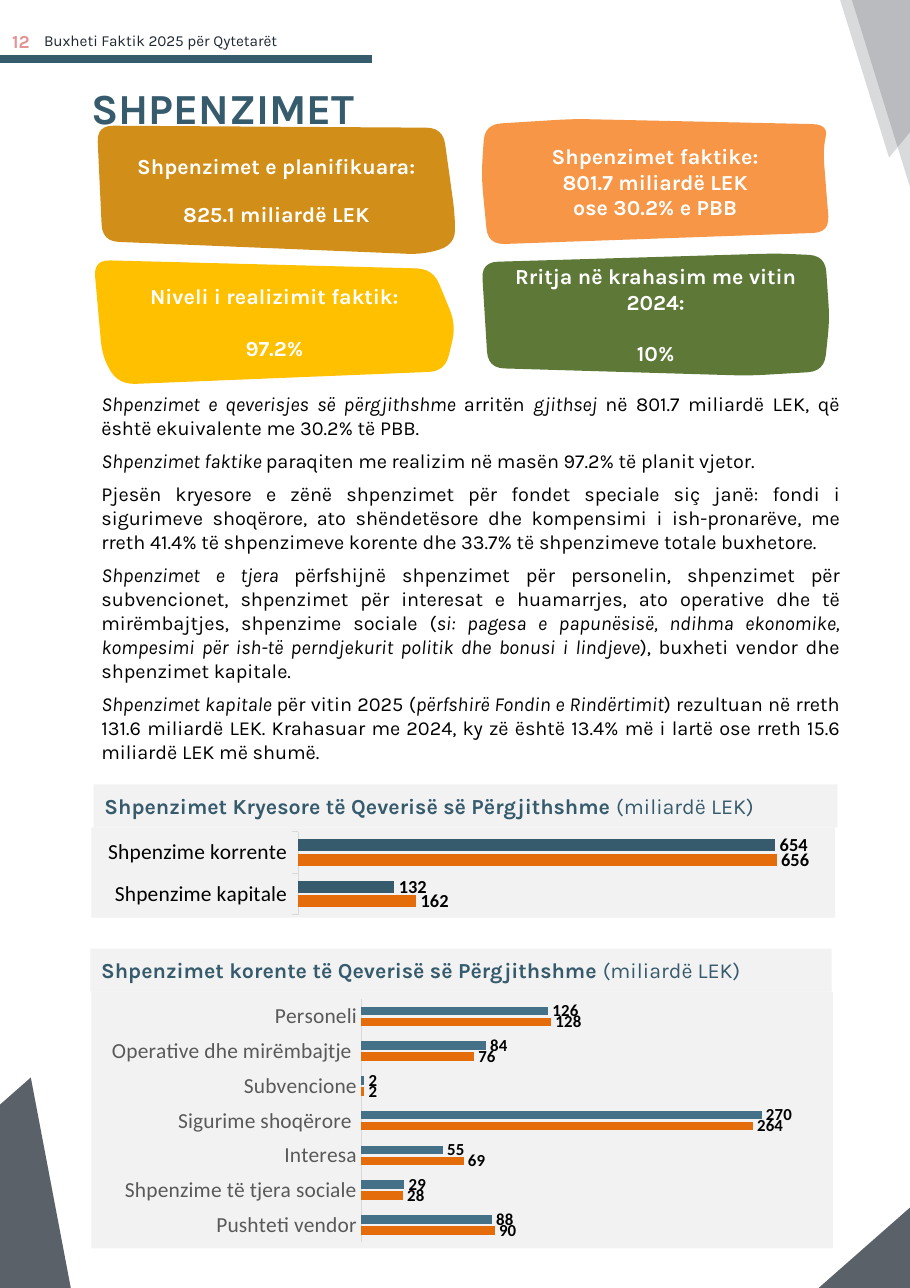
"""Build the expenditure page of the citizens' budget report."""
from math import dist
from lxml.etree import SubElement
from pptx import Presentation
from pptx.chart.data import CategoryChartData
from pptx.dml.color import RGBColor
from pptx.enum.chart import XL_CHART_TYPE, XL_LABEL_POSITION, XL_TICK_MARK
from pptx.enum.shapes import MSO_SHAPE
from pptx.enum.text import MSO_ANCHOR, MSO_AUTO_SIZE, PP_ALIGN
from pptx.oxml import parse_xml
from pptx.oxml.ns import nsdecls, qn
from pptx.util import Inches, Pt

BLUE = RGBColor.from_string("365B6D")
STEEL = RGBColor.from_string("447188")
ORANGE = RGBColor.from_string("E46C0A")
INK = RGBColor.from_string("1E2732")
PINK = RGBColor.from_string("E49393")
GREY = RGBColor.from_string("595959")
RULE = RGBColor.from_string("D9D9D9")
PANEL = RGBColor.from_string("F2F2F2")
BLACK = RGBColor.from_string("000000")
WHITE = RGBColor.from_string("FFFFFF")
OCHRE = RGBColor.from_string("D18F19")
PEACH = RGBColor.from_string("F79646")
GREEN = RGBColor.from_string("5D7837")
YELLOW = RGBColor.from_string("FFC000")

deck = Presentation()
deck.slide_width, deck.slide_height = Inches(8.26), Inches(11.69)
page = deck.slides.add_slide(deck.slide_layouts[1])
shapes = page.shapes


def style(para, size, color, bold=False):
    """Format every run of a paragraph in Karla."""
    for span in para.runs:
        span.font.name, span.font.size = "Karla", Pt(size)
        span.font.color.rgb, span.font.bold = color, bold


def add_outline(points, color):
    """Draw a closed, filled outline through points in inches."""
    corners = [(Inches(x), Inches(y)) for x, y in points]
    builder = shapes.build_freeform(*corners[0], scale=1.0)
    builder.add_line_segments(corners[1:], close=True)
    outline = builder.convert_to_shape()
    outline.shadow.inherit = False
    outline.fill.solid()
    outline.fill.fore_color.rgb = color
    outline.line.fill.background()
    return outline


title = shapes.title
title.left, title.top, title.width, title.height = map(Inches, (0.83, 0.66, 4.83, 0.49))
frame = title.text_frame
frame.text = "SHPENZIMET"
frame.auto_size, frame.vertical_anchor = MSO_AUTO_SIZE.NONE, MSO_ANCHOR.TOP
frame.margin_left = frame.margin_top = frame.margin_right = frame.margin_bottom = 0
frame.paragraphs[0].alignment = PP_ALIGN.LEFT
frame.paragraphs[0].line_spacing = Pt(39.2)
style(frame.paragraphs[0], 28, BLUE, True)

STORY = [
    "*Shpenzimet e qeverisjes së përgjithshme *arritën *gjithsej *në 801.7 miliardë LEK, "
    "që është ekuivalente me 30.2% të PBB.",
    "*Shpenzimet faktike *paraqiten me realizim në masën 97.2% të planit vjetor.",
    "Pjesën kryesore e zënë shpenzimet për fondet speciale siç janë: fondi i sigurimeve "
    "shoqërore, ato shëndetësore dhe kompensimi i ish-pronarëve, me rreth 41.4% të "
    "shpenzimeve korente dhe 33.7% të shpenzimeve totale buxhetore.",
    "*Shpenzimet e tjera *përfshijnë shpenzimet për personelin, shpenzimet për subvencionet, "
    "shpenzimet për interesat e huamarrjes, ato operative dhe të mirëmbajtjes, shpenzime "
    "sociale (*si: pagesa e papunësisë, ndihma ekonomike, kompesimi për ish-të perndjekurit "
    "politik dhe bonusi i lindjeve*), buxheti vendor dhe shpenzimet kapitale.",
    "*Shpenzimet kapitale *për vitin 2025 (*përfshirë Fondin e Rindërtimit*) rezultuan në "
    "rreth 131.6 miliardë LEK. Krahasuar me 2024, ky zë është 13.4% më i lartë ose rreth "
    "15.6 miliardë LEK më shumë.",
]
story = page.placeholders[1]
story.left, story.top, story.width, story.height = map(Inches, (0.82, 3.49, 6.9, 3.5))
frame = story.text_frame
frame.auto_size, frame.vertical_anchor = MSO_AUTO_SIZE.NONE, MSO_ANCHOR.MIDDLE
for index, passage in enumerate(STORY):
    para = frame.add_paragraph() if index else frame.paragraphs[0]
    para.alignment = PP_ALIGN.JUSTIFY
    para.space_before = Pt(6 if index else 0)
    props = para._p.get_or_add_pPr()
    props.set("marL", "0")
    props.set("indent", "0")
    SubElement(props, qn("a:buNone"))
    for part, words in enumerate(passage.split("*")):
        if words:
            span = para.add_run()
            span.text, span.font.italic = words, part % 2 == 1
    style(para, 13, BLACK)

BLOBS = [
    (OCHRE, ["Shpenzimet e planifikuara:", "825.1 miliardë LEK"], 14.7,
     [(0.88, 1.14), (4.02, 1.16), (4.13, 1.95), (4.13, 2.22), (3.85, 2.31), (0.93, 2.19)]),
    (PEACH, ["Shpenzimet faktike:", "801.7 miliardë LEK", "ose 30.2% e PBB"], 0,
     [(4.4, 1.13), (5.2, 1.08), (7.52, 1.13), (7.47, 1.35), (7.53, 2.11), (4.43, 2.22),
      (4.37, 1.6)]),
    (GREEN, ["Rritja në krahasim me vitin 2024:", "10%"], 17,
     [(4.37, 2.38), (7.05, 2.3), (7.49, 2.32), (7.53, 2.9), (7.48, 3.37), (6.8, 3.41),
      (4.43, 3.34)]),
    (YELLOW, ["Niveli i realizimit faktik:", "97.2%"], 17,
     [(0.85, 2.36), (3.93, 2.44), (4.14, 2.95), (4.04, 3.37), (1.08, 3.49), (0.93, 3.25)]),
]
ROUNDING, STEPS = 0.15, 6
for color, lines, gap, corners in BLOBS:
    curve = []
    for index, corner in enumerate(corners):
        ends = []
        for other in (corners[index - 1], corners[(index + 1) % len(corners)]):
            share = min(0.5, ROUNDING / dist(corner, other))
            ends.append([c + share * (o - c) for c, o in zip(corner, other)])
        for step in range(STEPS + 1):
            t = step / STEPS
            curve.append([(1 - t) ** 2 * a + 2 * t * (1 - t) * c + t * t * b
                          for a, c, b in zip(ends[0], corner, ends[1])])
    frame = add_outline(curve, color).text_frame
    frame.text = "\n".join(lines)
    frame.word_wrap, frame.vertical_anchor = True, MSO_ANCHOR.MIDDLE
    for index, para in enumerate(frame.paragraphs):
        para.alignment = PP_ALIGN.CENTER
        para.space_before = Pt(gap if index else 0)
        style(para, 14, WHITE, True)

BANNER = 0.39
CHART_LEFT = 0.83
CHARTS = [
    ("Shpenzimet Kryesore të Qeverisë së Përgjithshme ", 0.85, 7.12, 6.75, 0.82,
     (0.278, 0.048, 0.687, 0.921),
     {"Shpenzime kapitale": (162, 132), "Shpenzime korrente": (656, 654)},
     BLUE, BLACK, XL_TICK_MARK.OUTSIDE, 700, 120, -20, 12),
    ("Shpenzimet korente të Qeverisë së Përgjithshme ", 0.82, 8.61, 6.73, 2.33,
     (0.364, 0.029, 0.6, 0.948),
     {"Pushteti vendor": (90, 88), "Shpenzime të tjera sociale": (28, 29),
      "Interesa": (69, 55), "Sigurime shoqërore ": (264, 270), "Subvencione": (2, 2),
      "Operative dhe mirëmbajtje ": (76, 84), "Personeli": (128, 126)},
     STEEL, GREY, XL_TICK_MARK.NONE, 300, 182, -30, 11),
]
for (heading, left, top, width, height, inner, table, actual_color, name_color,
     tick, top_value, gap, overlap, label_size) in CHARTS:
    data = CategoryChartData(number_format="0")
    data.categories = list(table)
    for name, amounts in zip(("Buxheti", "Fakti"), zip(*table.values())):
        data.add_series(name, amounts)
    area = map(Inches, (CHART_LEFT, top + BANNER, width, height))
    chart = shapes.add_chart(XL_CHART_TYPE.BAR_CLUSTERED, *area, data).chart
    chart.has_title = chart.has_legend = False
    chart.font.name, chart.font.size, chart.font.color.rgb = "Calibri", Pt(14), BLACK
    chart_xml = chart._chartSpace.find(qn("c:chart"))
    chart_xml.addnext(parse_xml(
        f'<c:spPr {nsdecls("c", "a")}><a:solidFill><a:srgbClr val="{PANEL}"/></a:solidFill>'
        '<a:ln><a:noFill/></a:ln></c:spPr>'))
    plot_area = chart_xml.find(qn("c:plotArea"))
    for old in plot_area.findall(qn("c:layout")):
        plot_area.remove(old)
    places = "".join(f'<c:{key} val="{share}"/>' for key, share in zip("xywh", inner))
    plot_area.insert(0, parse_xml(
        f'<c:layout {nsdecls("c")}><c:manualLayout><c:layoutTarget val="inner"/>'
        f'<c:xMode val="edge"/><c:yMode val="edge"/>{places}</c:manualLayout></c:layout>'))
    values, categories = chart.value_axis, chart.category_axis
    values.visible = values.has_major_gridlines = False
    values.minimum_scale, values.maximum_scale, values.major_unit = 0, top_value, 100
    categories.major_tick_mark, categories.minor_tick_mark = tick, XL_TICK_MARK.NONE
    categories.format.line.color.rgb, categories.format.line.width = RULE, Pt(0.75)
    font = categories.tick_labels.font
    font.name, font.size, font.color.rgb = "Calibri", Pt(14), name_color
    plot = chart.plots[0]
    plot.gap_width, plot.overlap, plot.vary_by_categories = gap, overlap, False
    for series, color in zip(plot.series, (ORANGE, actual_color)):
        series.format.fill.solid()
        series.format.fill.fore_color.rgb = color
        labels = series.data_labels
        labels.show_value, labels.position = True, XL_LABEL_POSITION.OUTSIDE_END
        font = labels.font
        font.name, font.size, font.bold, font.color.rgb = "Calibri", Pt(label_size), True, BLACK
    banner = shapes.add_shape(MSO_SHAPE.RECTANGLE, *map(Inches, (left, top, width, BANNER)))
    banner.shadow.inherit = False
    banner.fill.solid()
    banner.fill.fore_color.rgb = PANEL
    banner.line.fill.background()
    banner.text_frame.vertical_anchor = MSO_ANCHOR.MIDDLE
    para = banner.text_frame.paragraphs[0]
    para.alignment = PP_ALIGN.LEFT
    for words in (heading, "(miliardë LEK)"):
        para.add_run().text = words
    style(para, 14, BLUE)
    para.runs[0].font.bold = True

add_outline([(0, 0.5), (3.38, 0.5), (3.38, 0.57), (0, 0.57)], BLUE)
for words, area, size, color, bold in [
    ("Buxheti Faktik 2025 për Qytetarët", (0.4, 0.26, 3.03, 0.18), 10, INK, False),
    ("12", (0.11, 0.24, 0.21, 0.21), 12, PINK, True),
]:
    frame = shapes.add_textbox(*map(Inches, area)).text_frame
    frame.text, frame.word_wrap = words, True
    frame.margin_left = frame.margin_top = frame.margin_right = frame.margin_bottom = 0
    frame.paragraphs[0].line_spacing = Pt(1.4 * size)
    style(frame.paragraphs[0], size, color, bold)

TOP_SHARD = [(8.32, 1.89), (7.59, -0.46), (9.89, -0.01)]
FOOT_SHARD = [(9.34, 10.01), (9.94, 13.17), (6.92, 12.14)]
for corners, shift, drop, alpha in [(TOP_SHARD, 0, 0, 17), (TOP_SHARD, -0.25, -0.46, 17),
                                    (FOOT_SHARD, 0, 0, 73), (FOOT_SHARD, -9.06, -0.23, 73)]:
    shard = add_outline([(x + shift, y + drop) for x, y in corners], INK)
    tint = shard._element.spPr.find(qn("a:solidFill"))[0]
    SubElement(tint, qn("a:alpha")).set("val", str(alpha * 1000))

deck.save("out.pptx")
